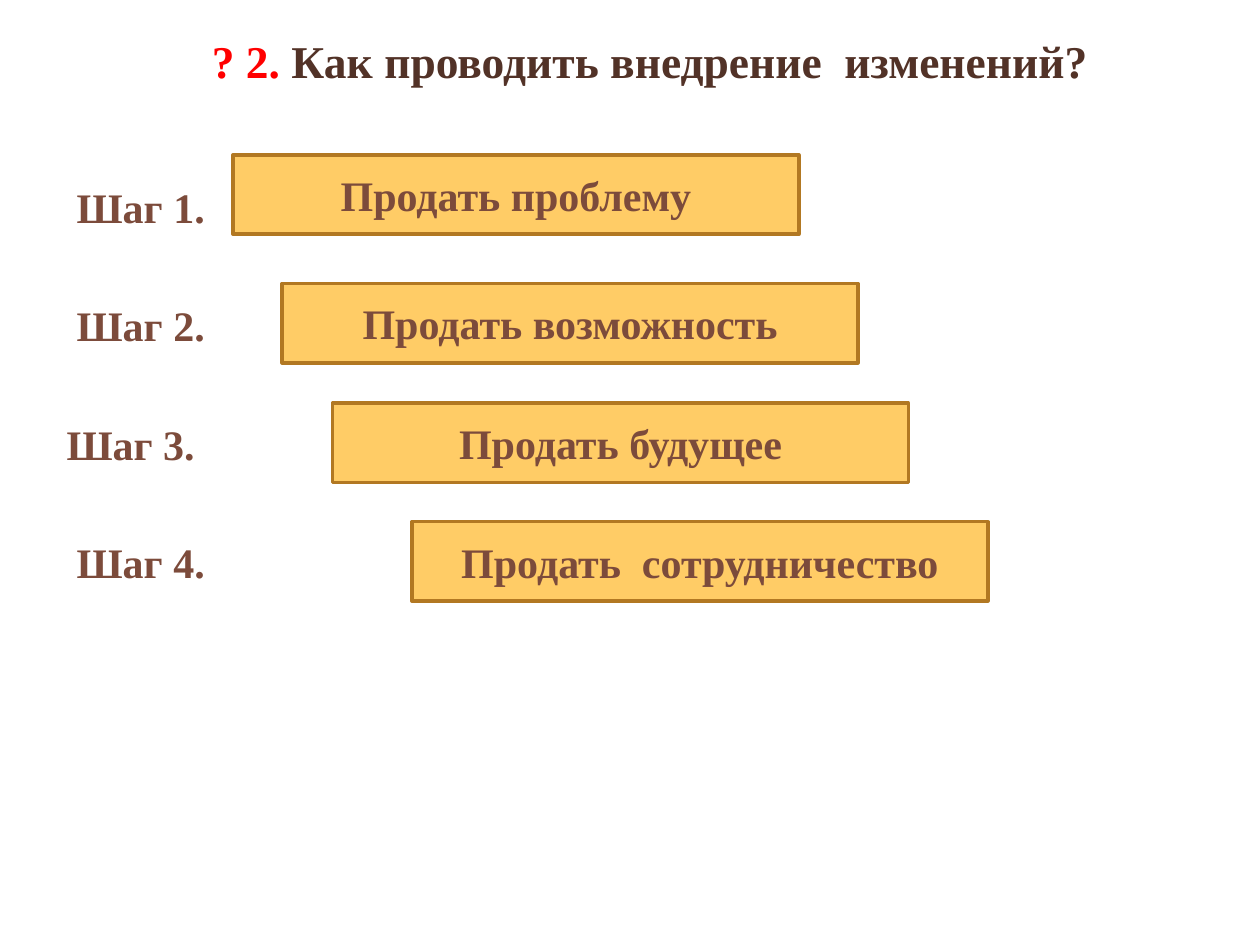
"""Build a slide with four staggered steps for introducing change."""
import pptx
import pptx.dml.color
import pptx.enum.shapes
import pptx.enum.text
import pptx.util

Inches, Pt = pptx.util.Inches, pptx.util.Pt
RGBColor = pptx.dml.color.RGBColor
ALIGN = pptx.enum.text.PP_ALIGN
ANCHOR = pptx.enum.text.MSO_ANCHOR

RED = RGBColor(0xFF, 0x00, 0x00)
DARK_BROWN = RGBColor(0x52, 0x32, 0x27)
BROWN = RGBColor(0x7C, 0x4B, 0x3B)
AMBER = RGBColor(0xFF, 0xCC, 0x66)
OCHRE = RGBColor(0xB2, 0x78, 0x22)

HEADING = [("? 2.", RED), (" Как проводить внедрение  изменений?", DARK_BROWN)]
STEPS = [
    {"label": "Шаг 1.", "label_left": 0.51, "action": "Продать проблему",
     "left": 1.85, "top": 1.23, "width": 4.49},
    {"label": "Шаг 2.", "label_left": 0.51, "action": "Продать возможность",
     "left": 2.24, "top": 2.25, "width": 4.57},
    {"label": "Шаг 3.", "label_left": 0.43, "action": "Продать будущее",
     "left": 2.64, "top": 3.2, "width": 4.57},
    {"label": "Шаг 4.", "label_left": 0.51, "action": "Продать  сотрудничество",
     "left": 3.27, "top": 4.14, "width": 4.57},
]
LABEL_TOP, LABEL_PITCH, LABEL_WIDTH, LABEL_HEIGHT = 1.39, 0.94, 1.4, 0.5
BAR_HEIGHT = 0.63
HEADING_FONT = {"name": "Times New Roman", "size": Pt(26), "bold": True}
STEP_FONT = {"name": "Times New Roman", "size": Pt(24), "bold": True}


def write(frame, runs, font_format, align, anchor):
    frame.word_wrap = True
    frame.auto_size = pptx.enum.text.MSO_AUTO_SIZE.NONE
    frame.vertical_anchor = anchor
    paragraph = frame.paragraphs[0]
    paragraph.alignment = align
    for wording, color in runs:
        run = paragraph.add_run()
        run.text = wording
        run.font.color.rgb = color
        for attribute, value in font_format.items():
            setattr(run.font, attribute, value)


def main():
    deck = pptx.Presentation()
    deck.slide_width, deck.slide_height = Inches(10), Inches(7.5)
    slide = deck.slides.add_slide(deck.slide_layouts[5])

    heading = slide.shapes.title
    heading_place = {"left": 0.91, "top": 0.21, "width": 8.5, "height": 0.54}
    for attribute, value in heading_place.items():
        setattr(heading, attribute, Inches(value))
    write(heading.text_frame, HEADING, HEADING_FONT, ALIGN.CENTER, ANCHOR.TOP)

    for index, step in enumerate(STEPS):
        label = slide.shapes.add_textbox(
            Inches(step["label_left"]), Inches(LABEL_TOP + index * LABEL_PITCH),
            Inches(LABEL_WIDTH), Inches(LABEL_HEIGHT))
        write(label.text_frame, [(step["label"], BROWN)], STEP_FONT,
              ALIGN.LEFT, ANCHOR.TOP)

        bar = slide.shapes.add_shape(
            pptx.enum.shapes.MSO_SHAPE.RECTANGLE, Inches(step["left"]),
            Inches(step["top"]), Inches(step["width"]), Inches(BAR_HEIGHT))
        bar.shadow.inherit = False
        bar.fill.solid()
        bar.fill.fore_color.rgb = AMBER
        bar.line.color.rgb = OCHRE
        bar.line.width = Pt(2)
        write(bar.text_frame, [(step["action"], BROWN)], STEP_FONT,
              ALIGN.CENTER, ANCHOR.MIDDLE)

    deck.save("out.pptx")


if __name__ == "__main__":
    main()
